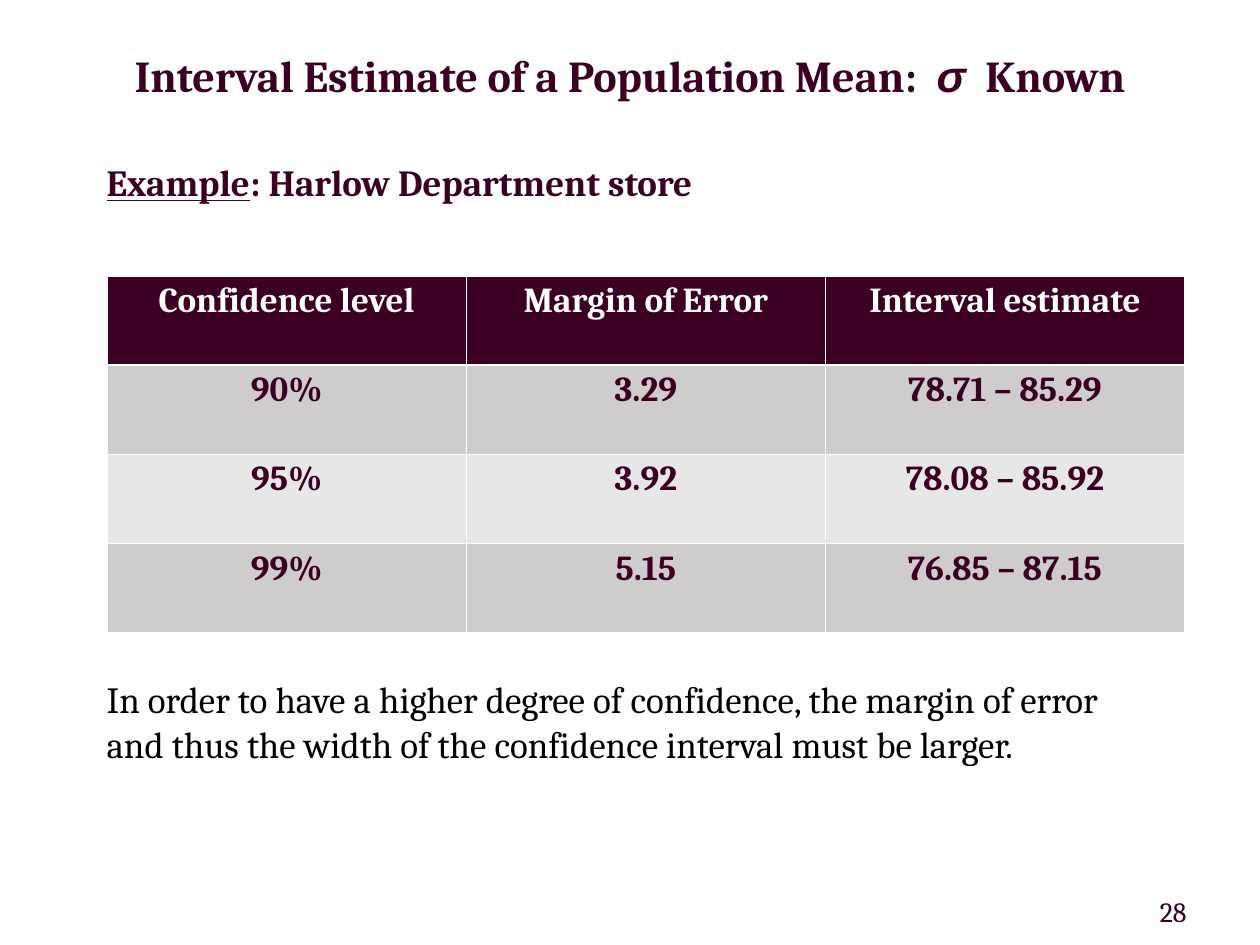
from lxml import etree
from pptx import Presentation
from pptx.dml.color import RGBColor
from pptx.enum import text
from pptx.oxml import ns
from pptx.util import Cm, Pt

PLUM, WHITE, BLACK = "3C0023", "FFFFFF", "000000"
GREYS = "CECCCD", "E8E7E8"
MID = text.PP_ALIGN.CENTER


def style(font, size, color=PLUM, bold=True, name="Cambria"):
    font.name, font.size, font.bold = name, Pt(size), bold
    font.color.rgb = RGBColor.from_string(color)


def add_box(left, top, width, height):
    frame = slide.shapes.add_textbox(Cm(left), Cm(top), Cm(width), Cm(height)).text_frame
    frame.word_wrap = True
    return frame.paragraphs[0]


prs = Presentation()
prs.slide_width, prs.slide_height = Cm(25.4), Cm(19.05)
slide = prs.slides.add_slide(prs.slide_layouts[5])

# Title
title = slide.shapes.title
title.left, title.top, title.width, title.height = Cm(1.9), Cm(0.38), Cm(21.6), Cm(2.26)
title.text_frame.auto_size = text.MSO_AUTO_SIZE.NONE
title.text_frame.vertical_anchor = text.MSO_ANCHOR.MIDDLE
para = title.text_frame.paragraphs[0]
para.alignment = MID
for words, face in (
    ("Interval Estimate of a Population Mean:  ", "Cambria"),
    ("σ", "Arial"),
    ("  Known", "Cambria"),
):
    run = para.add_run()
    run.text = words
    style(run.font, 25.2, name=face)
    run.font.italic = face == "Arial"

# Example heading
para = add_box(1.9, 3.1, 21.6, 1.2)
style(para.font, 21.1)
for words, line in (("Example", True), (": Harlow Department store", False)):
    run = para.add_run()
    run.text = words
    run.font.underline = line

# Table of interval estimates
rows = (
    ("Confidence level", "Margin of Error", "Interval estimate"),
    ("90%", "3.29", "78.71 – 85.29"),
    ("95%", "3.92", "78.08 – 85.92"),
    ("99%", "5.15", "76.85 – 87.15"),
)
table = slide.shapes.add_table(4, 3, Cm(2.16), Cm(5.56), Cm(21.72), Cm(7.2)).table
for r, row in enumerate(rows):
    table.rows[r].height = Cm(1.8)
    for c, words in enumerate(row):
        cell = table.cell(r, c)
        cell.margin_left = cell.margin_right = Cm(0.2)
        cell.margin_top = cell.margin_bottom = Cm(0.1)
        # White cell borders, which must come before the fill
        props = cell._tc.get_or_add_tcPr()
        for side in ("lnL", "lnR", "lnT", "lnB"):
            edge = etree.SubElement(props, ns.qn("a:" + side), w=str(Pt(1)))
            fill = etree.SubElement(edge, ns.qn("a:solidFill"))
            etree.SubElement(fill, ns.qn("a:srgbClr"), val=WHITE)
        cell.fill.solid()
        shade = GREYS[(r - 1) % 2] if r else PLUM
        cell.fill.fore_color.rgb = RGBColor.from_string(shade)
        cell.text = words
        para = cell.text_frame.paragraphs[0]
        para.alignment = MID
        style(para.font, 20, PLUM if r else WHITE)

# Conclusion
para = add_box(1.9, 13.52, 21.6, 2.2)
para.text = (
    "In order to have a higher degree of confidence, the margin of error "
    "and thus the width of the confidence interval must be larger."
)
style(para.font, 21.1, BLACK, False)

# Page number
para = add_box(22.89, 17.91, 1.52, 0.94)
para.text = "28"
para.alignment = MID
style(para.font, 16, bold=False)

prs.save("out.pptx")
